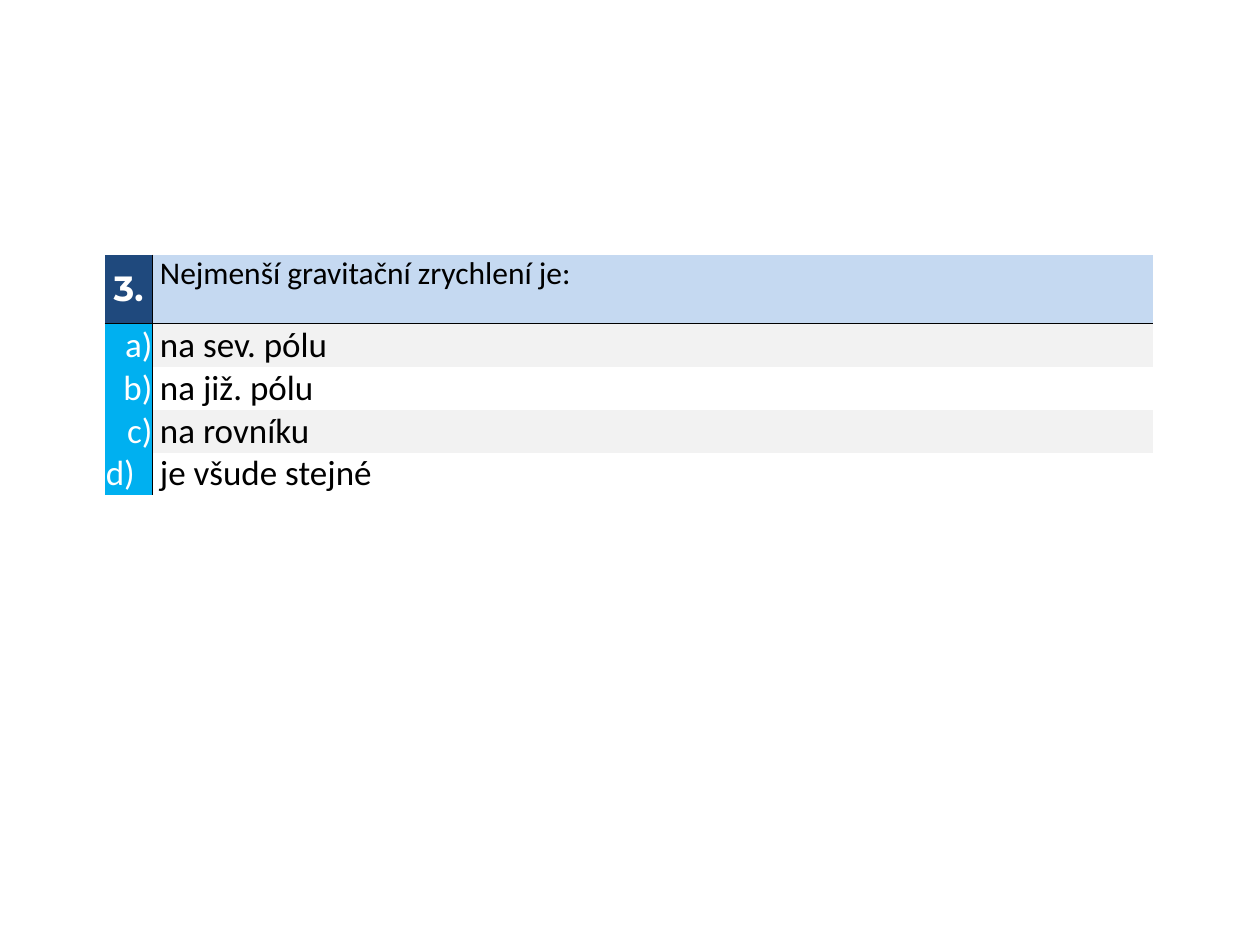
from lxml.etree import SubElement
from pptx import Presentation
from pptx.dml.color import RGBColor
from pptx.enum.text import MSO_ANCHOR as Anchor, PP_ALIGN as Align
from pptx.oxml.ns import qn
from pptx.util import Inches, Pt

WHITE, BLACK = "FFFFFF", "000000"
NAVY, PALE = "1F497D", "C5D9F1"
CYAN, GREY = "00B0F0", "F2F2F2"
LABEL_W, HEAD_H = 0.38, 0.55
INDENT = 0.06


def color(code):
    return RGBColor.from_string(code)


def set_lines(cell, sides):
    """Draw thin black borders on the given sides and none on the others."""
    props = cell._tc.get_or_add_tcPr()
    for side in "LRTB":
        line = SubElement(props, qn(f"a:ln{side}"), w=str(Pt(0.5)))
        if side in sides:
            fill = SubElement(line, qn("a:solidFill"))
            SubElement(fill, qn("a:srgbClr"), val=BLACK)
        else:
            SubElement(line, qn("a:noFill"))


def fill_cell(cell, text, ink, back, sides, size=20, font="Calibri", bold=False,
              align=Align.LEFT, anchor=Anchor.MIDDLE, left=0, right=0):
    set_lines(cell, sides)
    if back:
        cell.fill.solid()
        cell.fill.fore_color.rgb = color(back)
    else:
        cell.fill.background()
    cell.margin_left, cell.margin_right = Inches(left), Inches(right)
    cell.margin_top = cell.margin_bottom = 0
    cell.vertical_anchor = anchor
    para = cell.text_frame.paragraphs[0]
    para.text = text
    para.alignment = align
    for run in para.runs:
        run.font.name, run.font.size, run.font.bold = font, Pt(size), bold
        run.font.color.rgb = color(ink)


def add_quiz(slide, x, y, w, h, number, question, answers):
    """Place a numbered question with its lettered answers in the box."""
    count = len(answers)
    frame = slide.shapes.add_table(count + 1, 2, Inches(x), Inches(y),
                                   Inches(w), Inches(h))
    table = frame.table
    table.first_row = table.horz_banding = False
    table.columns[0].width = Inches(LABEL_W)
    table.columns[1].width = Inches(w - LABEL_W)
    table.rows[0].height = Inches(HEAD_H)

    fill_cell(table.cell(0, 0), number, WHITE, NAVY, "RB", font="Montserrat",
              bold=True, align=Align.CENTER)
    fill_cell(table.cell(0, 1), question, BLACK, PALE, "LB", size=18,
              anchor=Anchor.TOP, left=INDENT)

    for row, answer in enumerate(answers, 1):
        table.rows[row].height = Inches((h - HEAD_H) / count)
        top = "T" if row == 1 else ""
        fill_cell(table.cell(row, 0), f"{'abcd'[row - 1]})", WHITE, CYAN,
                  "R" + top, align=Align.RIGHT,
                  right=0.14 if row == count else 0)
        fill_cell(table.cell(row, 1), answer, BLACK, GREY if row % 2 else None,
                  "L" + top, anchor=Anchor.BOTTOM, left=INDENT)


def main():
    deck = Presentation()
    deck.slide_width, deck.slide_height = Inches(10), Inches(7.5)
    slide = deck.slides.add_slide(deck.slide_layouts[6])
    add_quiz(slide, 0.83, 2.02, 8.32, 1.91, "3.",
             "Nejmenší gravitační zrychlení je:",
             ["na sev. pólu", "na již. pólu", "na rovníku", "je všude stejné"])
    deck.save("out.pptx")


if __name__ == "__main__":
    main()
